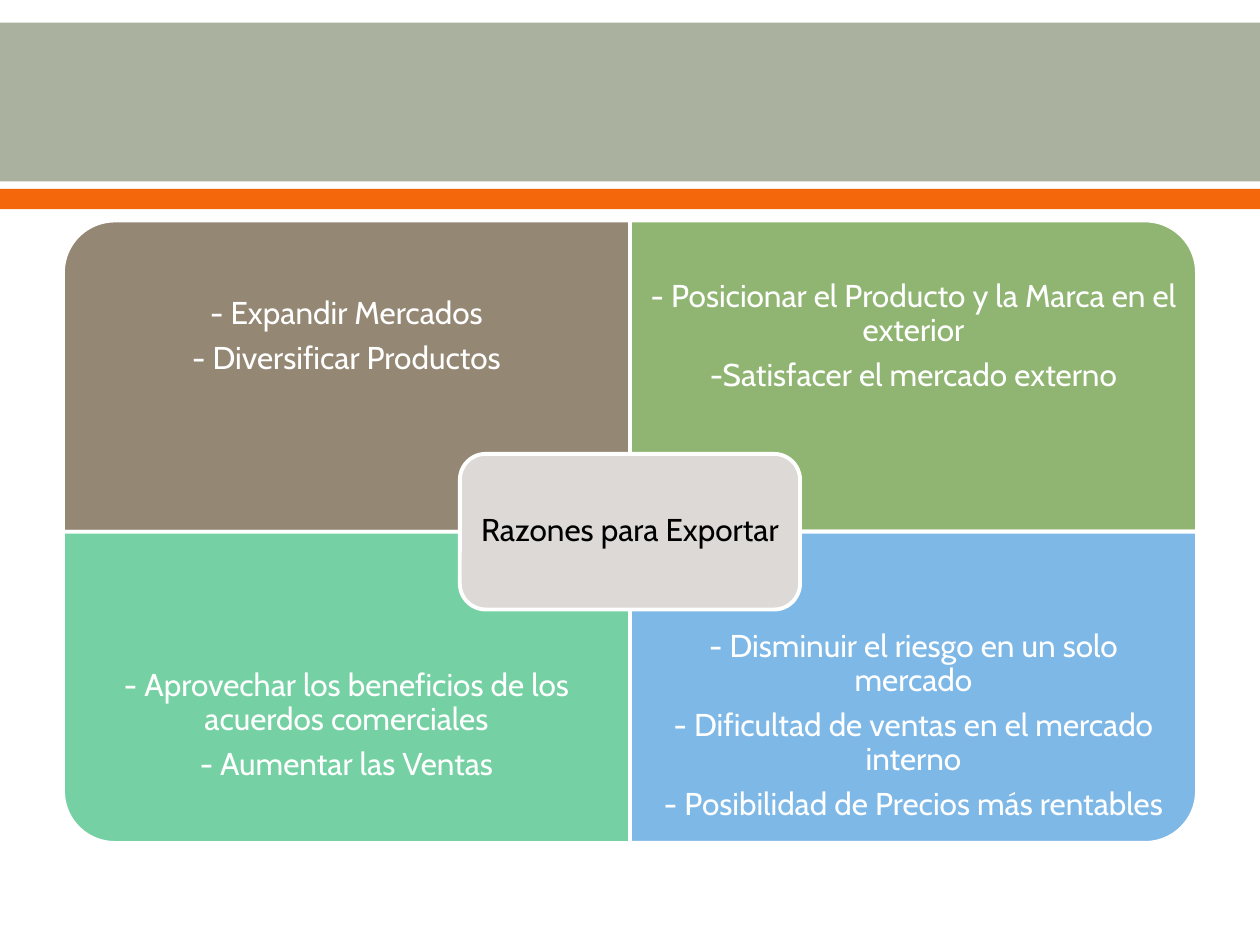
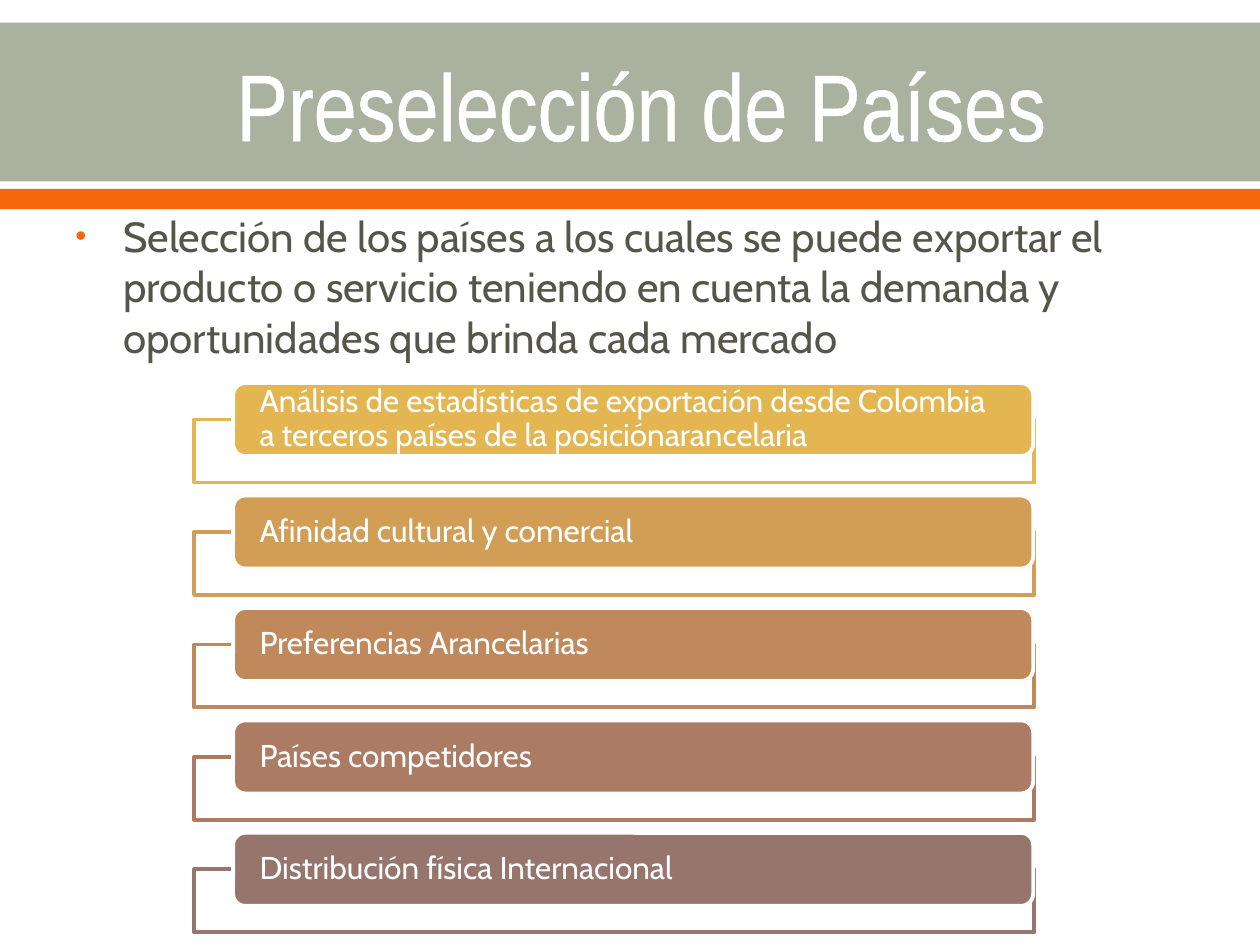
from lxml import etree
from pptx import Presentation
from pptx.dml.color import RGBColor
from pptx.enum import shapes, text
from pptx.oxml import ns
from pptx.util import Inches, Pt

WHITE = RGBColor(0xFF, 0xFF, 0xFF)
BLACK = RGBColor(0x00, 0x00, 0x00)
SAGE = RGBColor(0xAB, 0xB1, 0x9F)
ORANGE = RGBColor(0xF4, 0x68, 0x0B)
BODY_GREY = RGBColor(0x55, 0x55, 0x4A)
CENTRE_GREY = RGBColor(0xDC, 0xD9, 0xD6)
BROWN = RGBColor(0x94, 0x87, 0x74)
GREEN = RGBColor(0x90, 0xB5, 0x72)
MINT = RGBColor(0x75, 0xD1, 0xA3)
BLUE = RGBColor(0x7E, 0xB8, 0xE7)

TITLE_FONT = "Arial Narrow"
BODY_FONT = "Cabin"
LINE_WIDTH = 2.22
KIND = shapes.MSO_SHAPE
ALIGN = text.PP_ALIGN

# Text, colour, rotation that turns the round corner outwards
REASONS = [
    (["- Expandir Mercados", "- Diversificar Productos"], BROWN, 270),
    (["- Posicionar el Producto y la Marca en el exterior",
      "-Satisfacer el mercado externo"], GREEN, 0),
    (["- Aprovechar los beneficios de los acuerdos comerciales",
      "- Aumentar las Ventas"], MINT, 180),
    (["- Disminuir el riesgo en un solo mercado",
      "- Dificultad de ventas en el mercado interno",
      "- Posibilidad de Precios más rentables"], BLUE, 90),
]
CRITERIA = [
    ("Análisis de estadísticas de exportación desde Colombia "
     "a terceros países de la posiciónarancelaria", RGBColor(0xE3, 0xB6, 0x51)),
    ("Afinidad cultural y comercial", RGBColor(0xD2, 0x9D, 0x55)),
    ("Preferencias Arancelarias", RGBColor(0xC0, 0x89, 0x5B)),
    ("Países competidores", RGBColor(0xAC, 0x7B, 0x63)),
    ("Distribución física Internacional", RGBColor(0x96, 0x75, 0x6C)),
]


def add_panel(slide, kind, box, fill, line=None, rotation=0):
    """Add a filled shape that covers box (left, top, width, height) once rotated."""
    left, top, width, height = box
    if rotation % 180:
        left, top = left + (width - height) / 2, top + (height - width) / 2
        width, height = height, width
    panel = slide.shapes.add_shape(
        kind, Inches(left), Inches(top), Inches(width), Inches(height))
    panel.rotation = rotation
    panel.shadow.inherit = False
    panel.fill.solid()
    panel.fill.fore_color.rgb = fill
    if line is None:
        panel.line.fill.background()
    else:
        panel.line.color.rgb = line
        panel.line.width = Pt(LINE_WIDTH)
    return panel


def add_label(slide, box, lines, color, size=18, font=BODY_FONT, align=ALIGN.CENTER,
              anchor=text.MSO_ANCHOR.MIDDLE, insets=(0.1, 0.05)):
    """Add wrapped text; insets are (left and right, top and bottom)."""
    frame = slide.shapes.add_textbox(*map(Inches, box)).text_frame
    frame.word_wrap = True
    frame.vertical_anchor = anchor
    frame.margin_left = frame.margin_right = Inches(insets[0])
    frame.margin_top = frame.margin_bottom = Inches(insets[1])
    frame.text = "\n".join(lines)
    for paragraph in frame.paragraphs:
        paragraph.alignment = align
        for run in paragraph.runs:
            run.font.size = Pt(size)
            run.font.name = font
            run.font.color.rgb = color
    return frame


def add_diagram_label(slide, box, lines, color=WHITE, **style):
    frame = add_label(slide, box, lines, color, **style)
    for paragraph in frame.paragraphs:
        paragraph.line_spacing = 0.9
        paragraph.space_after = Pt(6.3)


def add_bands(slide):
    add_panel(slide, KIND.RECTANGLE, (0, 0.18, 10, 1.26), SAGE)
    add_panel(slide, KIND.RECTANGLE, (0, 1.5, 10, 0.16), ORANGE)


def add_title(slide, box, title):
    frame = add_label(slide, box, [title], WHITE, size=54, font=TITLE_FONT)
    properties = frame.paragraphs[0].runs[0].font._element
    outline = etree.Element(ns.qn("a:ln"), w=str(Pt(1.1)))
    fill = etree.SubElement(outline, ns.qn("a:solidFill"))
    etree.SubElement(fill, ns.qn("a:srgbClr"), val=str(WHITE))
    properties.insert(0, outline)


def add_bullet_text(slide, box, sentence):
    frame = add_label(slide, box, [sentence], BODY_GREY, size=24,
                      align=ALIGN.LEFT, anchor=text.MSO_ANCHOR.TOP)
    paragraph = frame.paragraphs[0]
    paragraph.space_before = Pt(4.8)
    properties = paragraph._p.get_or_add_pPr()
    properties.set("marL", str(Inches(0.38)))
    properties.set("indent", str(Inches(-0.38)))
    color = etree.SubElement(properties, ns.qn("a:buClr"))
    etree.SubElement(color, ns.qn("a:srgbClr"), val=str(ORANGE))
    etree.SubElement(properties, ns.qn("a:buSzPct"), val="75000")
    etree.SubElement(properties, ns.qn("a:buFont"), typeface="Arial")
    etree.SubElement(properties, ns.qn("a:buChar"), char="•")


def add_reason_matrix(slide, box, centre):
    """Four quadrants whose text keeps clear of the central box."""
    left, top, width, height = box
    cell_width, cell_height = width / 2, height / 2
    for index, (lines, color, rotation) in enumerate(REASONS):
        row, column = divmod(index, 2)
        x, y = left + column * cell_width, top + row * cell_height
        add_panel(slide, KIND.ROUND_1_RECTANGLE, (x, y, cell_width, cell_height),
                  color, WHITE, rotation)
        add_diagram_label(
            slide, (x, y + row * cell_height / 4, cell_width, cell_height * 0.75),
            lines, insets=(0.14, 0.14))
    centre_width, centre_height = width * 0.3, height / 4
    x, y = left + (width - centre_width) / 2, top + (height - centre_height) / 2
    add_panel(slide, KIND.ROUNDED_RECTANGLE, (x, y, centre_width, centre_height),
              CENTRE_GREY, WHITE)
    add_diagram_label(
        slide, (x + 0.06, y + 0.06, centre_width - 0.12, centre_height - 0.12),
        [centre], BLACK, insets=(0.07, 0.07))


def add_criterion(slide, box, criterion, color):
    """An outlined frame with a coloured tab over its upper edge."""
    left, top, width, height = box
    frame = add_panel(slide, KIND.RECTANGLE, (left, top + 0.29, width, height - 0.29),
                      WHITE, color)
    frame_color = frame.fill._xPr.find(".//" + ns.qn("a:srgbClr"))
    etree.SubElement(frame_color, ns.qn("a:alpha"), val="90000")
    tab_left, tab_width = left + 0.31, width - 0.32
    add_panel(slide, KIND.ROUNDED_RECTANGLE, (tab_left, top, tab_width, 0.58),
              color, WHITE)
    add_diagram_label(slide, (tab_left + 0.03, top + 0.03, tab_width - 0.06, 0.52),
                      [criterion], align=ALIGN.LEFT, insets=(0.18, 0))


def add_criteria_list(slide, box):
    left, top, width, height = box
    item_height = 0.79
    pitch = (height - item_height) / (len(CRITERIA) - 1)
    for index, (criterion, color) in enumerate(CRITERIA):
        add_criterion(slide, (left, top + index * pitch, width, item_height),
                      criterion, color)


def build_reasons_slide(slide):
    add_bands(slide)
    add_reason_matrix(slide, (0.5, 1.75, 9, 4.94), "Razones para Exportar")


def build_countries_slide(slide):
    add_bands(slide)
    add_title(slide, (0.59, 0.21, 9, 1.22), "Preselección de Países")
    add_bullet_text(
        slide, (0.5, 1.62, 9, 5.88),
        "Selección de los países a los cuales se puede exportar el producto o "
        "servicio teniendo en cuenta la demanda y oportunidades que brinda cada mercado")
    add_criteria_list(slide, (1.54, 3.04, 6.67, 4.36))


def main():
    deck = Presentation()
    deck.slide_width, deck.slide_height = Inches(10), Inches(7.5)
    for build in (build_reasons_slide, build_countries_slide):
        build(deck.slides.add_slide(deck.slide_layouts[6]))
    deck.save("out.pptx")


if __name__ == "__main__":
    main()
